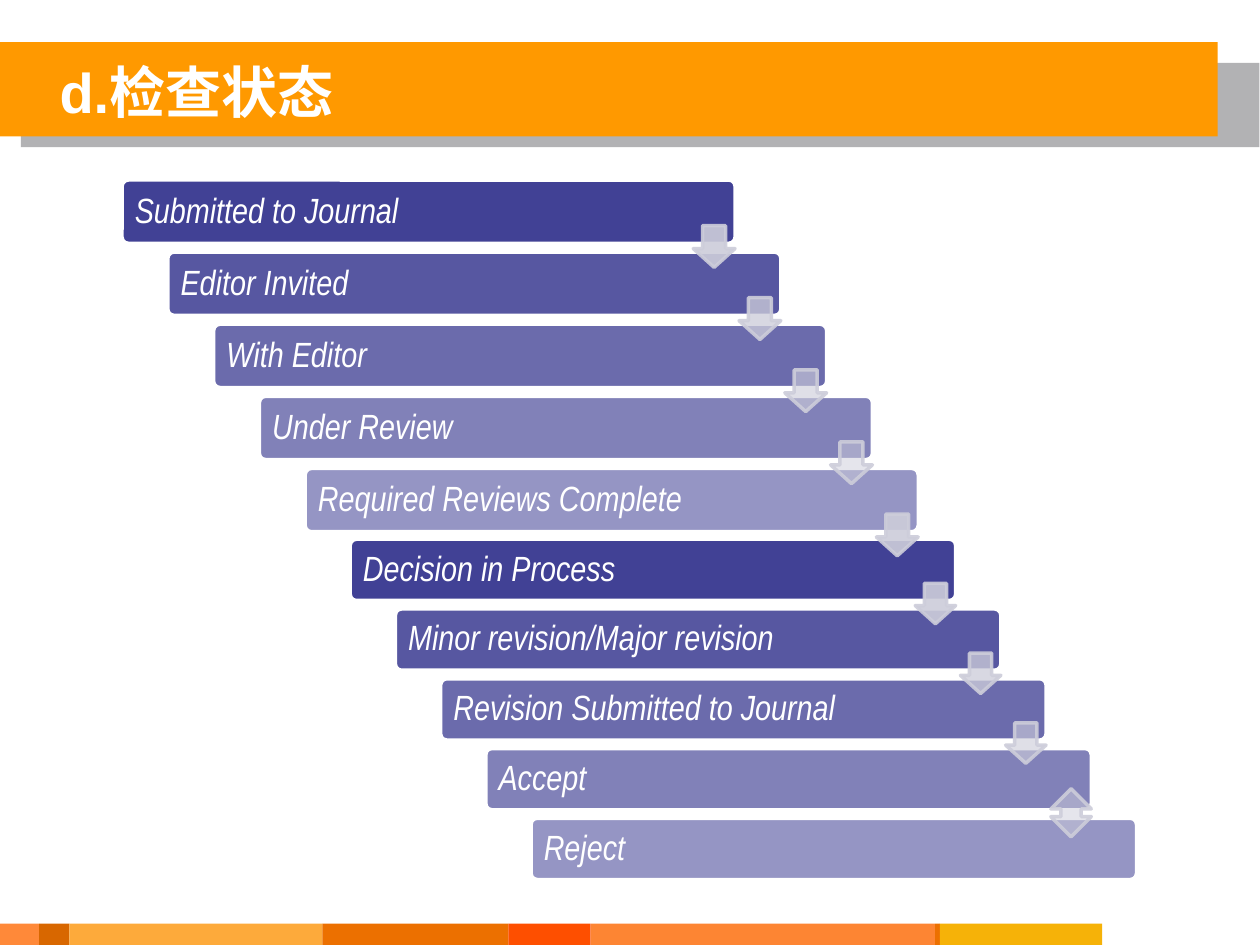
import pptx
import pptx.dml.color
import pptx.enum.shapes
import pptx.enum.text
import pptx.oxml
import pptx.oxml.ns
import pptx.util
from itertools import pairwise

Cm = pptx.util.Cm
Pt = pptx.util.Pt
MSO = pptx.enum.shapes.MSO_SHAPE
ANCHOR = pptx.enum.text.MSO_ANCHOR
ALIGN = pptx.enum.text.PP_ALIGN

COLORS = {
    "white": "FFFFFF", "banner": "FF9900", "shade": "B2B2B4",
    "bar": "2D2D8A", "arrow": "CDCDDA",
    "coral": "FF8939", "rust": "D86700", "amber": "FDAA3B", "orange": "EC7000",
    "red": "FE4F00", "peach": "FD8533", "gold": "F6B208",
}
STRIP_EDGES = [0, 0.79, 1.4, 6.5, 10.25, 11.91, 18.85, 18.95, 22.22]
STRIP_COLORS = ["coral", "rust", "amber", "orange", "red", "peach", "orange", "gold"]
REVIEW_BOX = (2.46, 3.63, 16.05, 7.09)
REVIEW_STEPS = ["Submitted to Journal", "Editor Invited", "With Editor",
                "Under Review", "Required Reviews Complete"]
DECISION_BOX = (7.06, 10.87, 15.85, 6.86)
DECISION_STEPS = ["Decision in Process", "Minor revision/Major revision",
                  "Revision Submitted to Journal", "Accept", "Reject"]
BAR_ALPHAS = [90, 80, 70, 60, 50]
ARROW_ALPHAS = [90, 77, 63, 50]


def rgb(name):
    """Return the named colour."""
    return pptx.dml.color.RGBColor.from_string(COLORS[name])


def set_alpha(fill, percent):
    """Make a solid fill partly transparent."""
    clr = fill._xPr.find(".//" + pptx.oxml.ns.qn("a:srgbClr"))
    alpha = pptx.oxml.parse_xml(
        f'<a:alpha {pptx.oxml.ns.nsdecls("a")} val="{percent * 1000}"/>')
    clr.append(alpha)


def add_block(s, kind, box, color, alpha=100, line=None, line_alpha=100):
    """Add a filled preset shape in a box given in centimetres."""
    sp = s.shapes.add_shape(kind, *map(Cm, box))
    sp.shadow.inherit = False
    sp.fill.solid()
    sp.fill.fore_color.rgb = rgb(color)
    if alpha < 100:
        set_alpha(sp.fill, alpha)
    if line:
        sp.line.width = Pt(2)
        sp.line.color.rgb = rgb(line)
        if line_alpha < 100:
            set_alpha(sp.line.fill, line_alpha)
    else:
        sp.line.fill.background()
    return sp


def add_banner(s, box, title):
    """Draw the banner with its offset shade and put the title on it."""
    x, y, w, h = box
    add_block(s, MSO.RECTANGLE, (x + 0.42, y + 0.42, w + 0.42, h - 0.2), "shade")
    add_block(s, MSO.RECTANGLE, box, "banner")
    sp = s.shapes.title
    sp.left, sp.top, sp.width, sp.height = map(Cm, (x, y - 0.08, 22.86, h + 0.25))
    s.shapes._spTree.append(sp._element)
    tf = sp.text_frame
    tf.text = title
    tf.margin_left = Cm(1.2)
    tf.vertical_anchor = ANCHOR.MIDDLE
    p = tf.paragraphs[0]
    p.alignment = ALIGN.LEFT
    p.font.name, p.font.size, p.font.bold = "Arial", Pt(32), True
    p.font.color.rgb = rgb("white")


def add_strip(s, top, height):
    """Draw the row of coloured blocks along the foot."""
    for (x, right), color in zip(pairwise(STRIP_EDGES), STRIP_COLORS):
        add_block(s, MSO.RECTANGLE, (x, top, right - x, height), color)


def stair_boxes(box, count=5):
    """Return the boxes of equal bars that descend across a box."""
    x, y, w, h = box
    bar_w, bar_h = 0.77 * w, 0.18 * h
    dx, dy = (w - bar_w) / (count - 1), (h - bar_h) / (count - 1)
    return [(x + i * dx, y + i * dy, bar_w, bar_h) for i in range(count)]


def add_bars(s, box, labels):
    """Draw a descending flight of labelled bars that fade step by step."""
    for bar, label, alpha in zip(stair_boxes(box), labels, BAR_ALPHAS):
        sp = add_block(s, MSO.ROUNDED_RECTANGLE, bar, "bar", alpha, "white")
        sp.adjustments[0] = 0.1
        tf = sp.text_frame
        tf.word_wrap = True
        tf.margin_left = Cm(0.22)
        tf.margin_right = tf.margin_top = tf.margin_bottom = Cm(0.1)
        tf.vertical_anchor = ANCHOR.MIDDLE
        tf.text = label
        p = tf.paragraphs[0]
        p.alignment = ALIGN.LEFT
        p.line_spacing = 0.9
        p.font.name, p.font.size, p.font.italic = "Arial Narrow", Pt(20), True
        p.font.color.rgb = rgb("white")


def add_arrow(s, bar, alpha, two_way=False):
    """Put an arrow over the lower right corner of a bar."""
    x, y, w, h = bar
    size = 0.66 * h
    height = 1.19 * size if two_way else size
    box = (x + w - size, y + 1.05 * h - height / 2, size, height)
    kind = MSO.UP_DOWN_ARROW if two_way else MSO.DOWN_ARROW
    sp = add_block(s, kind, box, "arrow", alpha, "arrow", 90)
    if not two_way:
        sp.adjustments[0], sp.adjustments[1] = 0.55, 0.45


def add_arrows(s, box, two_way_end=False):
    """Join the bars of a flight with arrows."""
    for i, (bar, alpha) in enumerate(zip(stair_boxes(box), ARROW_ALPHAS)):
        add_arrow(s, bar, alpha, two_way_end and i == 3)


def main():
    """Build the slide and save it."""
    prs = pptx.Presentation()
    prs.slide_width, prs.slide_height = Cm(25.4), Cm(19.05)
    s = prs.slides.add_slide(prs.slide_layouts[5])
    add_banner(s, (0, 0.85, 24.55, 1.9), "d.检查状态")
    add_strip(s, 18.62, 0.43)
    add_bars(s, REVIEW_BOX, REVIEW_STEPS)
    add_arrows(s, REVIEW_BOX)
    add_bars(s, DECISION_BOX, DECISION_STEPS)
    add_arrows(s, DECISION_BOX, two_way_end=True)
    add_arrow(s, stair_boxes(REVIEW_BOX)[-1], 90)
    prs.save("out.pptx")


if __name__ == "__main__":
    main()
